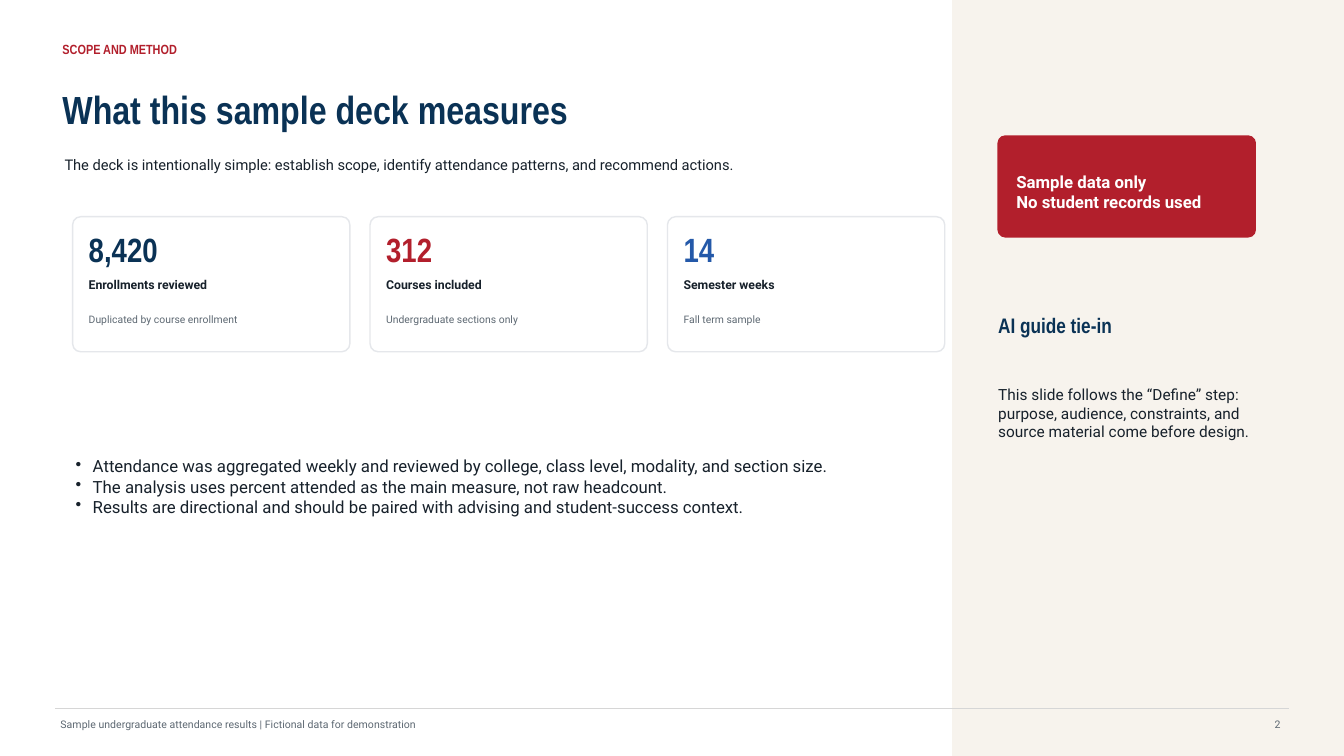
from lxml import etree
from pptx import Presentation
from pptx.dml.color import RGBColor
from pptx.enum.shapes import MSO_CONNECTOR, MSO_SHAPE
from pptx.enum.text import MSO_ANCHOR, PP_ALIGN
from pptx.oxml.ns import qn
from pptx.util import Inches, Pt

NAVY = RGBColor(0x0A, 0x32, 0x55)
RED = RGBColor(0xB2, 0x1F, 0x2C)
BLUE = RGBColor(0x24, 0x59, 0xA9)
INK = RGBColor(0x17, 0x21, 0x2B)
GRAY = RGBColor(0x5D, 0x68, 0x72)
CREAM = RGBColor(0xF7, 0xF3, 0xED)
BORDER = RGBColor(0xE5, 0xE7, 0xEB)
RULE = RGBColor(0xD6, 0xD6, 0xD6)
WHITE = RGBColor(0xFF, 0xFF, 0xFF)

HEADING, BODY = "Arial Narrow", "Roboto"
WIDTH, HEIGHT = 13.33, 7.5

METRICS = [
    ("8,420", "Enrollments reviewed", "Duplicated by course enrollment", NAVY),
    ("312", "Courses included", "Undergraduate sections only", RED),
    ("14", "Semester weeks", "Fall term sample", BLUE),
]
FINDINGS = [
    "Attendance was aggregated weekly and reviewed by college, class level, "
    "modality, and section size.",
    "The analysis uses percent attended as the main measure, not raw headcount.",
    "Results are directional and should be paired with advising and "
    "student-success context.",
]


def add_bullet(p):
    pPr = p._p.get_or_add_pPr()
    pPr.set("marL", str(Inches(0.17)))
    pPr.set("indent", str(-Inches(0.17)))
    etree.SubElement(pPr, qn("a:buChar")).set("char", "•")


def add_text(s, x, y, w, h, lines, size, color=INK, font=BODY, bold=False,
             align=PP_ALIGN.LEFT, bullets=False):
    """Add a margin-free, vertically centred text box, one paragraph per line."""
    tf = s.shapes.add_textbox(Inches(x), Inches(y), Inches(w), Inches(h)).text_frame
    tf.word_wrap = True
    tf.vertical_anchor = MSO_ANCHOR.MIDDLE
    tf.margin_left = tf.margin_right = tf.margin_top = tf.margin_bottom = 0
    for i, line in enumerate(lines):
        p = tf.add_paragraph() if i else tf.paragraphs[0]
        p.alignment = align
        if bullets:
            add_bullet(p)
        r = p.add_run()
        r.text = line
        r.font.name, r.font.size, r.font.bold = font, Pt(size), bold
        r.font.color.rgb = color


def add_panel(s, x, y, w, h, fill, line, radius=None):
    kind = MSO_SHAPE.RECTANGLE if radius is None else MSO_SHAPE.ROUNDED_RECTANGLE
    sp = s.shapes.add_shape(kind, Inches(x), Inches(y), Inches(w), Inches(h))
    if radius is not None:
        sp.adjustments[0] = radius
    sp.shadow.inherit = False
    sp.fill.solid()
    sp.fill.fore_color.rgb = fill
    sp.line.color.rgb = line
    sp.line.width = Pt(1)


def add_header(s, x, y):
    add_text(s, x, y, 5.8, 0.25, ["SCOPE AND METHOD"], 9.5, RED, HEADING, True)
    add_text(s, x, y + 0.38, 7.7, 0.68, ["What this sample deck measures"],
             28, NAVY, HEADING, True)
    add_text(s, x + 0.02, y + 1.1, 8.4, 0.35,
             ["The deck is intentionally simple: establish scope, identify "
              "attendance patterns, and recommend actions."], 10.5)


def add_metric_card(s, x, y, w, h, value, label, note, color):
    add_panel(s, x, y, w, h, WHITE, BORDER, 0.06)
    left = x + 0.16
    add_text(s, left, y + 0.13, w - 0.35, 0.38, [value], 24, color, HEADING, True)
    add_text(s, left, y + 0.56, w - 0.35, 0.22, [label], 8.8, bold=True)
    add_text(s, left, y + 0.86, w - 0.4, 0.32, [note], 7.4, GRAY)


def add_metric_row(s, x, y, card_w, card_h, gap):
    for i, metric in enumerate(METRICS):
        add_metric_card(s, x + i * (card_w + gap), y, card_w, card_h, *metric)


def add_sidebar(s, x, y, w, h):
    add_panel(s, x, y, w, h, CREAM, CREAM)
    left, top = x + 0.45, y + 1.35
    add_panel(s, left, top, 2.55, 1, RED, RED, 0.07)
    add_text(s, left + 0.18, top + 0.18, 2.19, 0.75,
             ["Sample data only", "No student records used"], 12, WHITE, bold=True)
    add_text(s, left, y + 3.1, 2.6, 0.25, ["AI guide tie-in"], 15, NAVY, HEADING, True)
    add_text(s, left, y + 3.55, 2.55, 1.1,
             ["This slide follows the “Define” step: purpose, audience, "
              "constraints, and source material come before design."], 11)


def add_footer(s, x, y, w):
    rule = s.shapes.add_connector(MSO_CONNECTOR.STRAIGHT, Inches(x), Inches(y),
                                  Inches(x + w), Inches(y))
    rule.line.color.rgb = RULE
    rule.line.width = Pt(0.75)
    etree.SubElement(rule._element.spPr, qn("a:effectLst"))
    add_text(s, x + 0.05, y + 0.05, 8.6, 0.22,
             ["Sample undergraduate attendance results | "
              "Fictional data for demonstration"], 7.5, GRAY)
    add_text(s, x + w - 0.43, y + 0.05, 0.35, 0.22, ["2"], 7.5, GRAY,
             align=PP_ALIGN.RIGHT)


def main():
    prs = Presentation()
    prs.slide_width, prs.slide_height = Inches(WIDTH), Inches(HEIGHT)
    s = prs.slides.add_slide(prs.slide_layouts[6])
    add_header(s, 0.62, 0.36)
    add_sidebar(s, 9.45, 0, WIDTH - 9.45, HEIGHT)
    add_metric_row(s, 0.72, 2.15, 2.75, 1.34, 0.2)
    add_text(s, 0.75, 4.05, 7.5, 1.55, FINDINGS, 12, bullets=True)
    add_footer(s, 0.55, 7.03, 12.23)
    prs.save("out.pptx")


if __name__ == "__main__":
    main()
